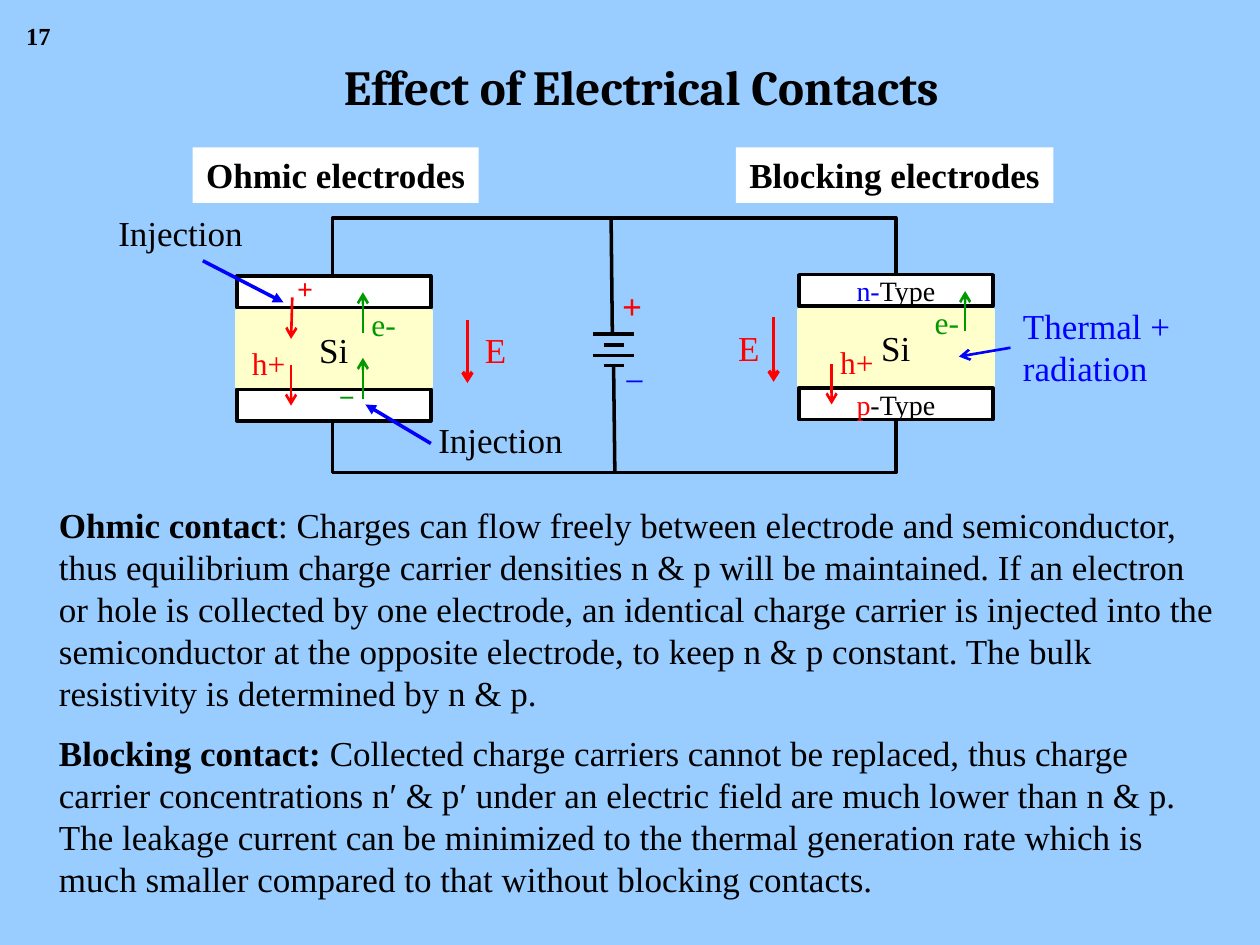
from dataclasses import dataclass

import pptx
import pptx.dml.color
import pptx.enum.shapes
import pptx.enum.text
import pptx.oxml
import pptx.oxml.ns
import pptx.util
from pptx.util import Inches


@dataclass(frozen=True)
class Theme:
    background: str = "99CCFF"
    black: str = "000000"
    number: str = "020100"
    white: str = "FFFFFF"
    silicon: str = "FFFFCC"
    red: str = "FF0000"
    green: str = "009900"
    blue: str = "0000FF"
    title_font: str = "Cambria"
    body_font: str = "Times New Roman"
    title: int = 28
    body: int = 20
    carrier: int = 18
    small: int = 16
    page: int = 14
    thick: float = 2
    thin: float = 1.5


theme = Theme()
rgb = pptx.dml.color.RGBColor.from_string
Alignment = pptx.enum.text.PP_ALIGN
Anchor = pptx.enum.text.MSO_ANCHOR
RECTANGLE = pptx.enum.shapes.MSO_SHAPE.RECTANGLE
STRAIGHT = pptx.enum.shapes.MSO_CONNECTOR.STRAIGHT


def write(shape, paragraphs, size=theme.body, font=theme.body_font,
          align=Alignment.LEFT, anchor=Anchor.TOP, wrap=False):
    """Fill a shape with paragraphs, each a list of (text, colour, bold) runs."""
    frame = shape.text_frame
    frame.word_wrap = wrap
    frame.vertical_anchor = anchor
    if anchor == Anchor.TOP:
        frame.auto_size = pptx.enum.text.MSO_AUTO_SIZE.SHAPE_TO_FIT_TEXT
    for index, runs in enumerate(paragraphs):
        paragraph = frame.add_paragraph() if index else frame.paragraphs[0]
        paragraph.alignment = align
        if index and wrap:
            paragraph.space_before = pptx.util.Pt(10)
        for text, color, bold in runs:
            run = paragraph.add_run()
            run.text = text
            run.font.name = font
            run.font.size = pptx.util.Pt(size)
            run.font.bold = bold
            run.font.color.rgb = rgb(color)


def draw_line(start, end, color=theme.black, width=theme.thick, head=None):
    connector = slide.shapes.add_connector(STRAIGHT, *map(Inches, start + end))
    connector.line.color.rgb = rgb(color)
    connector.line.width = pptx.util.Pt(width)
    properties = connector.element.spPr
    if head:
        tail_end = pptx.oxml.parse_xml(
            f'<a:tailEnd {pptx.oxml.ns.nsdecls("a")} type="{head}"/>')
        connector.line._get_or_add_ln().append(tail_end)
    properties.append(pptx.oxml.parse_xml(f'<a:effectLst {pptx.oxml.ns.nsdecls("a")}/>'))


presentation = pptx.Presentation()
presentation.slide_width, presentation.slide_height = Inches(10), Inches(7.5)
slide = presentation.slides.add_slide(presentation.slide_layouts[6])
slide.background.fill.solid()
slide.background.fill.fore_color.rgb = rgb(theme.background)

# Page number, title and explanation
number = slide.shapes.add_textbox(*map(Inches, (0.11, 0.12, 0.42, 0.33)))
write(number, [[("17", theme.number, True)]], theme.page)

title = slide.shapes.add_textbox(*map(Inches, (0.8, 0.33, 8.58, 0.76)))
write(title, [[("Effect of Electrical Contacts", theme.black, True)]], theme.title,
      theme.title_font, Alignment.CENTER, Anchor.MIDDLE, True)
title.text_frame.paragraphs[0].line_spacing = 0.9

explanation = slide.shapes.add_textbox(*map(Inches, (0.37, 3.95, 9.37, 3.3)))
write(explanation, [
    [("Ohmic contact", theme.black, True),
     (": Charges can flow freely between electrode and semiconductor, thus equilibrium "
      "charge carrier densities n & p will be maintained. If an electron or hole is "
      "collected by one electrode, an identical charge carrier is injected into the "
      "semiconductor at the opposite electrode, to keep n & p constant. The bulk "
      "resistivity is determined by n & p.", theme.black, False)],
    [("Blocking contact: ", theme.black, True),
     ("Collected charge carriers cannot be replaced, thus charge carrier concentrations "
      "n′ & p′ under an electric field are much lower than n & p. The leakage current "
      "can be minimized to the thermal generation rate which is much smaller compared to "
      "that without blocking contacts.", theme.black, False)],
], wrap=True)

# Detectors: silicon between a top and a bottom electrode
detectors = [
    (1.88, 2.19, [], []),
    (6.34, 2.18,
     [("n-", theme.blue, False), ("Type", theme.black, False)],
     [("p", theme.red, False), ("-Type", theme.black, False)]),
]
for left, top, top_runs, bottom_runs in detectors:
    layers = [
        (0.28, 0.6, theme.silicon, theme.silicon, theme.body, [("Si", theme.black, False)]),
        (0, 0.25, theme.white, theme.black, theme.small, top_runs),
        (0.9, 0.25, theme.white, theme.black, theme.small, bottom_runs),
    ]
    for offset, height, fill, outline, size, runs in layers:
        layer = slide.shapes.add_shape(
            RECTANGLE, *map(Inches, (left, top + offset, 1.54, height)))
        layer.shadow.inherit = False
        layer.fill.solid()
        layer.fill.fore_color.rgb = rgb(fill)
        layer.line.color.rgb = rgb(outline)
        layer.line.width = pptx.util.Pt(theme.thick)
        if runs:
            write(layer, [runs], size, align=Alignment.CENTER, anchor=Anchor.MIDDLE, wrap=True)

# Circuit: one wire above and one below both detectors, battery between them
wire_left, wire_right = 2.64, 7.11
for electrode_y, wire_y in ((2.19, 1.73), (3.34, 3.75)):
    builder = slide.shapes.build_freeform(Inches(wire_left), Inches(electrode_y))
    builder.add_line_segments(
        [(Inches(x), Inches(y)) for x, y in
         ((wire_left, wire_y), (wire_right, wire_y), (wire_right, electrode_y))],
        close=False)
    wire = builder.convert_to_shape()
    wire.shadow.inherit = False
    wire.fill.background()
    wire.line.color.rgb = rgb(theme.black)
    wire.line.width = pptx.util.Pt(theme.thick)

for y, half_width in ((2.65, 0.165), (2.74, 0.08), (2.82, 0.165), (2.9, 0.08)):
    draw_line((4.87 - half_width, y), (4.87 + half_width, y))
draw_line((4.86, 2.65), (4.85, 1.73))
draw_line((4.87, 2.9), (4.88, 3.75))

# Arrows: field, carrier motion and callouts
arrows = [
    ((3.71, 2.54), (3.71, 3.04), theme.red, theme.thick, "arrow"),
    ((6.14, 2.52), (6.14, 3.03), theme.red, theme.thick, "arrow"),
    ((2.31, 2.9), (2.31, 3.22), theme.red, theme.thin, "arrow"),
    ((2.32, 2.36), (2.31, 2.69), theme.red, theme.thin, "arrow"),
    ((6.6, 2.89), (6.6, 3.21), theme.red, theme.thin, "arrow"),
    ((2.88, 3.17), (2.88, 2.84), theme.green, theme.thin, "arrow"),
    ((2.88, 2.64), (2.88, 2.32), theme.green, theme.thin, "arrow"),
    ((7.66, 2.63), (7.66, 2.31), theme.green, theme.thin, "arrow"),
    ((1.61, 2.07), (2.25, 2.4), theme.blue, theme.thick, "triangle"),
    ((3.42, 3.52), (2.9, 3.21), theme.blue, theme.thick, "triangle"),
    ((8.02, 2.76), (7.61, 2.83), theme.blue, theme.thin, "arrow"),
]
for arrow in arrows:
    draw_line(*arrow)

# Labels
labels = [
    ((0.84, 1.63, 1.19, 0.43), ["Injection"], theme.black, theme.body, False),
    ((3.38, 3.27, 1.19, 0.43), ["Injection"], theme.black, theme.body, False),
    ((8.02, 2.37, 1.38, 0.77), ["Thermal +", "radiation"], theme.blue, theme.body, False),
    ((4.84, 2.21, 0.36, 0.44), ["+"], theme.red, theme.body, True),
    ((4.86, 2.8, 0.36, 0.44), ["−"], theme.blue, theme.body, False),
    ((3.75, 2.56, 0.37, 0.44), ["E"], theme.red, theme.body, False),
    ((5.76, 2.54, 0.37, 0.44), ["E"], theme.red, theme.body, False),
    ((1.9, 2.68, 0.49, 0.4), ["h+"], theme.red, theme.carrier, False),
    ((6.57, 2.67, 0.49, 0.4), ["h+"], theme.red, theme.carrier, False),
    ((2.85, 2.37, 0.4, 0.4), ["e-"], theme.green, theme.carrier, False),
    ((7.32, 2.36, 0.4, 0.4), ["e-"], theme.green, theme.carrier, False),
    ((2.26, 2.11, 0.32, 0.37), ["+"], theme.red, theme.small, True),
    ((2.59, 2.96, 0.32, 0.37), ["−"], theme.green, theme.small, True),
]
for box, lines, color, size, bold in labels:
    label = slide.shapes.add_textbox(*map(Inches, box))
    write(label, [[(line, color, bold)] for line in lines], size)

for left, width, heading in ((1.53, 2.27, "Ohmic electrodes"),
                             (5.84, 2.52, "Blocking electrodes")):
    plate = slide.shapes.add_shape(RECTANGLE, *map(Inches, (left, 1.17, width, 0.44)))
    plate.shadow.inherit = False
    plate.fill.solid()
    plate.fill.fore_color.rgb = rgb(theme.white)
    plate.line.fill.background()
    write(plate, [[(heading, theme.black, True)]], align=Alignment.CENTER)

presentation.save("out.pptx")
